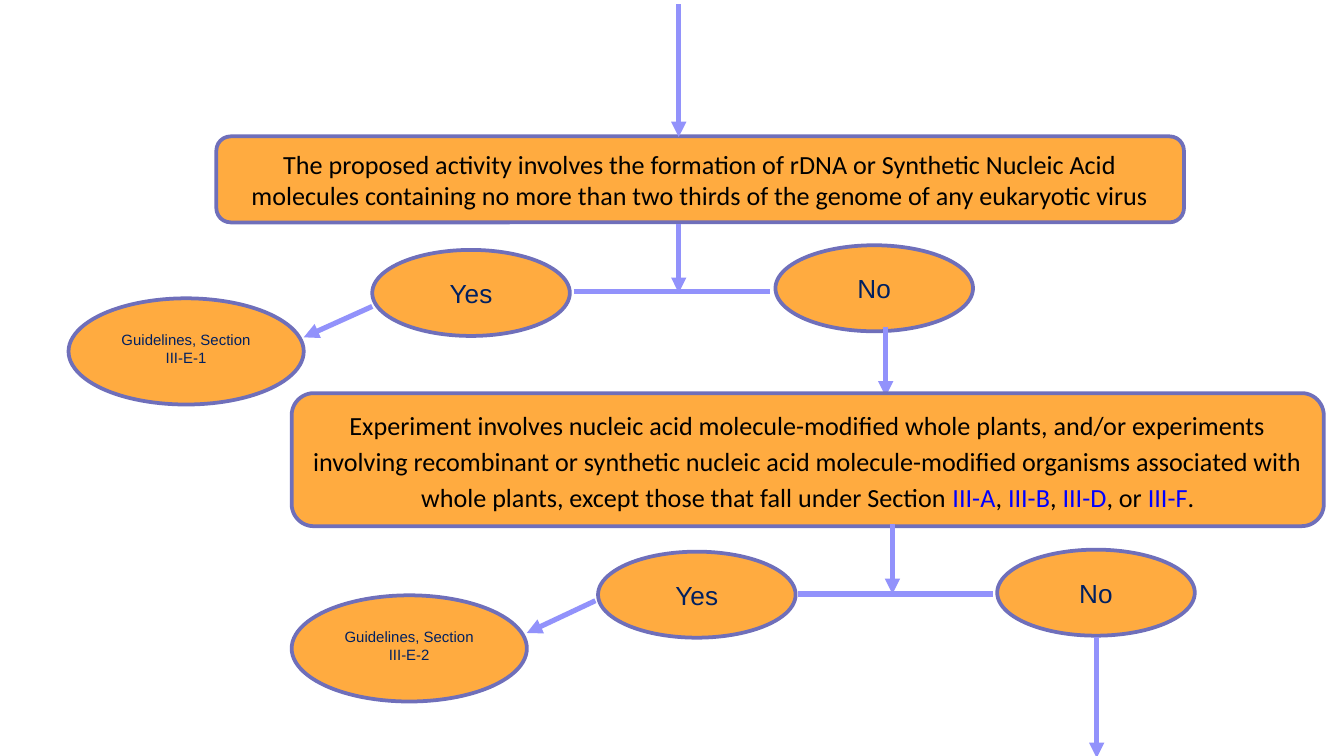
from dataclasses import dataclass

import pptx
import pptx.dml.color
import pptx.enum.shapes
import pptx.enum.text
import pptx.oxml.ns
import pptx.util
from lxml import etree

# The grid has square cells, 100 columns across a 16:9 slide.
COLUMNS, ROWS = 100, 56.25
CELL = pptx.util.Inches(0.1)

ORANGE, OUTLINE, ARROW = "FFAB40", "6F6FBA", "9292FB"
BLACK, NAVY, LINK = "000000", "002060", "0000FF"

SHAPES = pptx.enum.shapes.MSO_SHAPE
ANCHORS = pptx.enum.text.MSO_ANCHOR


@dataclass(frozen=True)
class Span:
    text: str
    color: str


@dataclass(frozen=True)
class Node:
    column: float
    row: float
    columns: float
    rows: float
    spans: tuple[Span, ...]
    shape: int = SHAPES.OVAL
    font: str = "Arial"
    size: float = 14
    anchor: int = ANCHORS.MIDDLE
    line_spacing: float = 1.0
    bottom_inset: float = 0.4


@dataclass(frozen=True)
class Link:
    start: tuple[float, float]
    end: tuple[float, float]
    arrow: bool = True


def cells(count: float) -> int:
    return round(count * CELL)


def rgb(color: str) -> pptx.dml.color.RGBColor:
    return pptx.dml.color.RGBColor.from_string(color)


def question(column: float, row: float, columns: float, rows: float,
             *spans: Span, **text_format) -> Node:
    return Node(column, row, columns, rows, spans,
                SHAPES.ROUNDED_RECTANGLE, "Calibri", **text_format)


def answer(column: float, row: float, text: str) -> Node:
    return Node(column, row, 14.7, 6.4, (Span(text, NAVY),))


def guideline(column: float, row: float, section: str) -> Node:
    return Node(column, row, 17.5, 7.9,
                (Span(f"Guidelines, Section {section}", NAVY),),
                size=8, bottom_inset=0.8)


def write_text(box, spans: tuple[Span, ...], *, font: str, size: float,
               anchor: int, line_spacing: float, bottom_inset: float) -> None:
    frame = box.text_frame
    frame.word_wrap = True
    frame.vertical_anchor = anchor
    frame.margin_left = frame.margin_right = cells(0.7)
    frame.margin_top = cells(0.4)
    frame.margin_bottom = cells(bottom_inset)
    para = frame.paragraphs[0]
    para.alignment = pptx.enum.text.PP_ALIGN.CENTER
    para.line_spacing = line_spacing
    for span in spans:
        run = para.add_run()
        run.text = span.text
        run.font.name = font
        run.font.size = pptx.util.Pt(size)
        run.font.color.rgb = rgb(span.color)


def draw_node(page, node: Node) -> None:
    box = page.shapes.add_shape(node.shape, cells(node.column), cells(node.row),
                                cells(node.columns), cells(node.rows))
    box.shadow.inherit = False
    box.fill.solid()
    box.fill.fore_color.rgb = rgb(ORANGE)
    box.line.color.rgb = rgb(OUTLINE)
    box.line.width = pptx.util.Pt(2)
    write_text(box, node.spans, font=node.font, size=node.size,
               anchor=node.anchor, line_spacing=node.line_spacing,
               bottom_inset=node.bottom_inset)


def draw_link(page, link: Link) -> None:
    connector = page.shapes.add_connector(
        pptx.enum.shapes.MSO_CONNECTOR.STRAIGHT,
        *map(cells, link.start + link.end))
    connector.line.color.rgb = rgb(ARROW)
    connector.line.width = pptx.util.Pt(2.75)
    if link.arrow:
        outline = connector.line._get_or_add_ln()
        etree.SubElement(outline, pptx.oxml.ns.qn("a:tailEnd"), type="triangle")
    etree.SubElement(connector._element.spPr, pptx.oxml.ns.qn("a:effectLst"))


# Listed from back to front.
FLOW: tuple[Node | Link, ...] = (
    question(16.1, 10.15, 72, 6.4, Span(
        "The proposed activity involves the formation of rDNA or Synthetic "
        "Nucleic Acid molecules containing no more than two thirds of the "
        "genome of any eukaryotic virus", BLACK)),
    Link((50.5, 16.7), (50.5, 21.8)),
    Link((42.7, 21.7), (57.3, 21.7), arrow=False),
    guideline(5.1, 22.2, "III-E-1"),
    answer(27.7, 18.6, "Yes"),
    answer(57.7, 18.25, "No"),
    Link((27.7, 22.8), (22.6, 25.1)),
    Link((65.9, 24.3), (65.9, 29.5)),
    question(
        21.7, 29.25, 76.8, 9.9,
        Span("Experiment involves nucleic acid molecule-modified whole plants, "
             "and/or experiments involving recombinant or synthetic nucleic "
             "acid molecule-modified organisms associated with whole plants, "
             "except those that fall under Section ", BLACK),
        Span("III-A", LINK), Span(", ", BLACK),
        Span("III-B", LINK), Span(", ", BLACK),
        Span("III-D", LINK), Span(", or ", BLACK),
        Span("III-F", LINK), Span(".", BLACK),
        anchor=ANCHORS.TOP, line_spacing=1.15),
    Link((66.4, 39), (66.4, 44.2)),
    Link((59.4, 44.2), (73.9, 44.2), arrow=False),
    answer(44.5, 41.05, "Yes"),
    answer(74.2, 40.9, "No"),
    Link((44.3, 44.7), (39.2, 47.1)),
    guideline(21.7, 44.3, "III-E-2"),
    Link((81.6, 47.4), (81.6, 56.4)),
    Link((50.5, 0.3), (50.5, 10.2)),
)


def main() -> None:
    deck = pptx.Presentation()
    deck.slide_width, deck.slide_height = cells(COLUMNS), cells(ROWS)
    page = deck.slides.add_slide(deck.slide_layouts[6])
    for part in FLOW:
        if isinstance(part, Node):
            draw_node(page, part)
        else:
            draw_link(page, part)
    deck.save("out.pptx")


if __name__ == "__main__":
    main()
